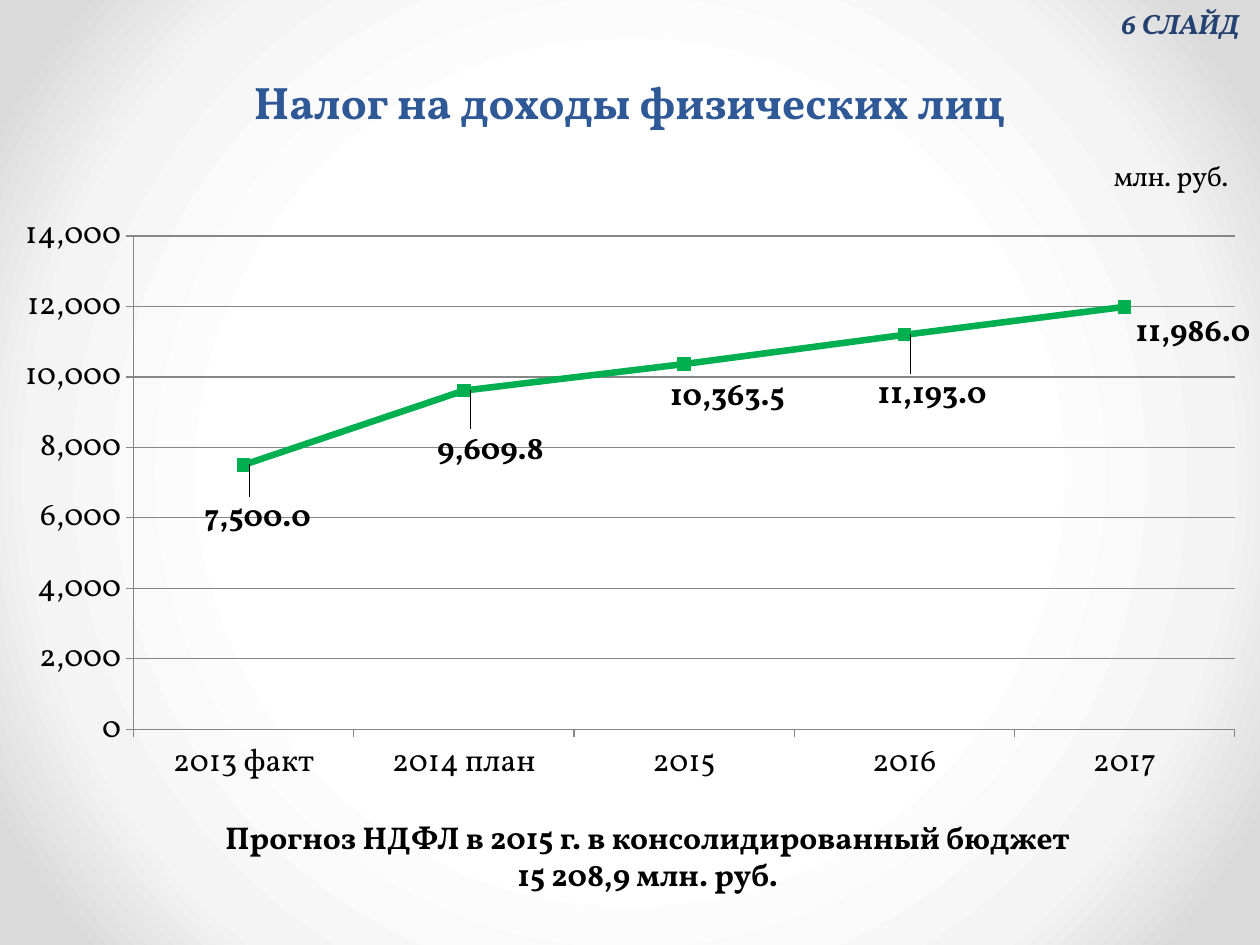
from dataclasses import dataclass

from lxml import etree
from pptx import Presentation
from pptx.chart.data import CategoryChartData
from pptx.dml.color import RGBColor
from pptx.enum.chart import XL_CHART_TYPE, XL_LABEL_POSITION, XL_MARKER_STYLE, XL_TICK_MARK
from pptx.enum.text import MSO_ANCHOR, PP_ALIGN
from pptx.oxml.ns import qn
from pptx.util import Inches, Pt

LINE_MARKERS = XL_CHART_TYPE.LINE_MARKERS
LABEL_RIGHT = XL_LABEL_POSITION.RIGHT
SQUARE = XL_MARKER_STYLE.SQUARE
TICK_OUTSIDE = XL_TICK_MARK.OUTSIDE
TOP, BOTTOM = MSO_ANCHOR.TOP, MSO_ANCHOR.BOTTOM
CENTER, RIGHT = PP_ALIGN.CENTER, PP_ALIGN.RIGHT


@dataclass(frozen=True)
class Theme:
    font: str = "Vollkorn"
    heading: str = "2F5897"
    tag: str = "234271"
    text: str = "000000"
    income: str = "00B050"
    grid: str = "868686"
    backdrop: tuple = ((50, "FFFFFF"), (76, "F4F4F4"), (92, "DADADA"))
    heading_size: int = 26
    body_size: int = 18
    small_size: int = 16


THEME = Theme()
WIDTH, HEIGHT = 10, 7.5
INCOME = {
    "2013 факт": 7500,
    "2014 план": 9609.8,
    "2015": 10363.5,
    "2016": 11193,
    "2017": 11986,
}
LABEL_SHIFTS = ((-0.04, 0.08), (-0.03, 0.09), (-0.02, 0.05), (-0.03, 0.09), (0, 0.04))


def style_font(font, size, color=THEME.text, bold=False, italic=False):
    font.name = THEME.font
    font.size = Pt(size)
    font.bold = bold
    font.italic = italic
    font.color.rgb = RGBColor.from_string(color)


def paint_background(page):
    page.background.fill.gradient()
    gradient = page.element.find(".//" + qn("a:gradFill"))
    for child in list(gradient):
        gradient.remove(child)
    stops = etree.SubElement(gradient, qn("a:gsLst"))
    for share, color in THEME.backdrop:
        stop = etree.SubElement(stops, qn("a:gs"), pos=str(share * 1000))
        etree.SubElement(stop, qn("a:srgbClr"), val=color)
    circle = etree.SubElement(gradient, qn("a:path"))
    circle.set("path", "circle")
    etree.SubElement(circle, qn("a:fillToRect"), l="50000", t="50000", r="50000", b="50000")


def add_text(page, box, text, size, color, align, anchor=TOP, italic=False, spacing=None):
    frame = page.shapes.add_textbox(*map(Inches, box)).text_frame
    frame.word_wrap = True
    frame.vertical_anchor = anchor
    para = frame.paragraphs[0]
    para.text = text
    para.alignment = align
    para.line_spacing = spacing
    for span in para.runs:
        style_font(span.font, size, color, bold=True, italic=italic)


def set_layout(parent, index, **shares):
    for old in parent.findall(qn("c:layout")):
        parent.remove(old)
    layout = etree.Element(qn("c:layout"))
    manual = etree.SubElement(layout, qn("c:manualLayout"))
    for name, value in shares.items():
        etree.SubElement(manual, qn("c:" + name), val=str(value))
    parent.insert(index, layout)


def style_axis(axis):
    style_font(axis.tick_labels.font, THEME.body_size)
    axis.major_tick_mark = TICK_OUTSIDE
    axis.format.line.color.rgb = RGBColor.from_string(THEME.grid)
    axis.format.line.width = Pt(0.75)


def style_series(series):
    green = RGBColor.from_string(THEME.income)
    series.smooth = False
    series.format.line.color.rgb = green
    series.format.line.width = Pt(3.75)
    series.marker.style = SQUARE
    series.marker.size = 7
    series.marker.format.fill.solid()
    series.marker.format.fill.fore_color.rgb = green
    series.marker.format.line.color.rgb = green
    labels = series.data_labels
    labels.show_value = True
    labels.number_format = "#,##0.0"
    labels.number_format_is_linked = False
    style_font(labels.font, THEME.body_size, bold=True)
    for index, (across, down) in enumerate(LABEL_SHIFTS):
        label = series.points[index].data_label
        style_font(label.font, THEME.body_size, bold=True)
        label.position = LABEL_RIGHT
    for node, (across, down) in zip(series._element.iter(qn("c:dLbl")), LABEL_SHIFTS):
        set_layout(node, 1, x=across, y=down)
        number_format = etree.Element(qn("c:numFmt"), formatCode="#,##0.0", sourceLinked="0")
        node.insert(2, number_format)


def add_income_chart(page, box):
    data = CategoryChartData(number_format="#,##0.0")
    data.categories = list(INCOME)
    data.add_series("Series 1", list(INCOME.values()))
    chart = page.shapes.add_chart(LINE_MARKERS, *map(Inches, box), data).chart
    style_font(chart.font, THEME.body_size)
    chart.has_legend = False
    chart.has_title = True
    chart.chart_title.text_frame.text = "млн. руб."
    style_font(chart.chart_title.text_frame.paragraphs[0].runs[0].font, THEME.small_size)
    set_layout(chart.chart_title._element, 1, xMode="edge", yMode="edge", x=0.88, y=0.04)
    plot_area = chart.element.find(".//" + qn("c:plotArea"))
    set_layout(plot_area, 0, layoutTarget="inner", xMode="edge", yMode="edge",
               x=0.106, y=0.165, w=0.874, h=0.732)
    style_axis(chart.category_axis)
    amounts = chart.value_axis
    style_axis(amounts)
    amounts.minimum_scale, amounts.maximum_scale, amounts.major_unit = 0, 14000, 2000
    amounts.tick_labels.number_format = "#,##0"
    amounts.tick_labels.number_format_is_linked = False
    amounts.has_major_gridlines = True
    amounts.major_gridlines.format.line.color.rgb = RGBColor.from_string(THEME.grid)
    amounts.major_gridlines.format.line.width = Pt(0.75)
    chart.plots[0].vary_by_categories = False
    style_series(chart.plots[0].series[0])


def main():
    deck = Presentation()
    deck.slide_width, deck.slide_height = Inches(WIDTH), Inches(HEIGHT)
    page = deck.slides.add_slide(deck.slide_layouts[6])
    paint_background(page)
    add_text(page, (0.5, 0, 9, 1.07), "Налог на доходы физических лиц",
             THEME.heading_size, THEME.heading, CENTER, BOTTOM, spacing=Pt(58))
    add_income_chart(page, (0, 0.99, WIDTH, 5.35))
    add_text(page, (0.89, 6.44, 8.5, 0.71),
             "Прогноз НДФЛ в 2015 г. в консолидированный бюджет\v15 208,9 млн. руб.",
             THEME.body_size, THEME.text, CENTER)
    add_text(page, (8.58, 0, 1.36, 0.37), "6 СЛАЙД",
             THEME.small_size, THEME.tag, RIGHT, italic=True)
    deck.save("out.pptx")


if __name__ == "__main__":
    main()
